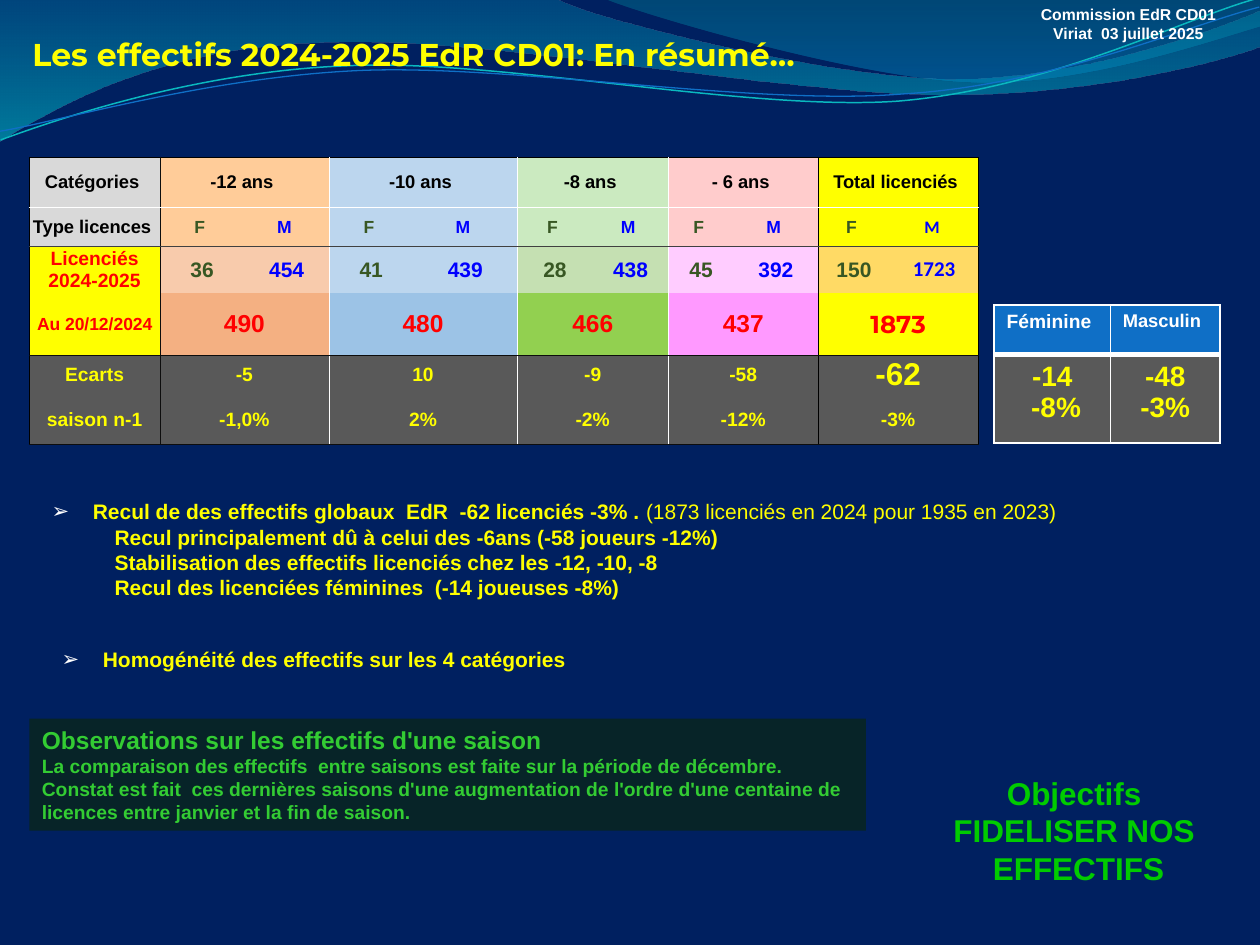
from copy import deepcopy
from math import cos, radians, sin
from lxml.etree import SubElement
from pptx import Presentation
from pptx.dml.color import RGBColor as Rgb
from pptx.enum.shapes import MSO_SHAPE as Shape
from pptx.enum.text import MSO_ANCHOR as Anchor, PP_ALIGN as Align
from pptx.oxml import parse_xml
from pptx.oxml.ns import nsdecls, qn
from pptx.util import Pt

THEME = {
    "navy": "002060", "yellow": "FFFF00", "white": "FFFFFF", "black": "000000",
    "ink": "0D0D0D", "rule": "404040", "red": "FF0000", "female": "385723",
    "male": "0000FF", "grey": "D9D9D9", "dark": "595959", "blue": "0F6FC6",
    "teal": "0AB8BF", "lime": "00CC00", "leaf": "33CC33", "forest": "072428",
    "font": "Arial", "title_font": "Montserrat", "alt_font": "Calibri",
    "title": 18, "note_title": 14, "body": 12, "note": 11, "small": 10.5,
    "tiny": 10, "stamp": 9, "total": 14, "balance": 16,
}

WAVES = [
    ([("L", 0, 0), ("L", 316.8, -0.7), ("C", 342.7, 12.2, 478.1, 45.4, 545.8, 45.4),
      ("C", 614.2, 45.4, 689.8, 18.7, 720, 6.5), ("L", 720.7, 25.9),
      ("C", 707.8, 31.7, 626.4, 54.7, 537.1, 54), ("C", 447.8, 54, 275, 20.2, 185, 24.5),
      ("C", 92.9, 25.9, 33.1, 59.8, -0.7, 81.4)],
     [(0, "0074A1", 45), (1, "00C6CF", 55)]),
    ([("L", 344.9, -0.7), ("C", 366.5, 7.9, 491, 44.6, 553.7, 46.8),
      ("C", 616.3, 49.7, 691.9, 23, 720, 15.1), ("L", 720, 0)],
     [(0, "00A1A9", 30), (0.8, "008BBF", 45)]),
]
TILT = 357.3
STRANDS = [
    ([("L", 0, 79.9), ("C", 34.6, 67, 113.8, 41, 199.4, 37.4),
      ("C", 284.4, 33.8, 427, 64.1, 513.4, 57.6),
      ("C", 599.8, 51.1, 675.4, 10.8, 718.6, -1.4)], (359.3, 41.4), "teal", 0.85),
    ([("L", 0, 74.9), ("C", 33.8, 69.1, 118.1, 43.9, 203.8, 40.3),
      ("C", 290.2, 36.7, 429.8, 60.5, 516.2, 54),
      ("C", 601.9, 48.2, 677.5, 15.1, 720, 4.3)], (359.7, 42.5), "blue", 0.75),
]

LABELS = [("Catégories ", "small", "black", "grey"), ("Type licences ", "small", "black", "grey"),
          ("Licenciés\v2024-2025", "note", "red", "yellow"),
          ("Au 20/12/2024", "tiny", "red", "yellow"),
          ("Ecarts", "note", "yellow", "dark"), ("saison n-1", "note", "yellow", "dark")]
GROUPS = [
    ("-12 ans ", "36", "454", "490", "-5", "-1,0%", "FFCC99", "F8CBAC", "F4B082"),
    ("-10 ans ", "41", "439", "480", "10", "2%", "BCD6EE", "BCD6EE", "9CC3E6"),
    ("-8 ans ", "28", "438", "466", "-9", "-2%", "CBEAC0", "C5E0B2", "92D050"),
    ("- 6 ans ", "45", "392", "437", "-58", "-12%", "FFCCCC", "FFCCFF", "FF99FF"),
    ("Total licenciés ", "150", "1723", "1873", "-62", "-3%", "FFFF00", "FFDA65", "FFFF00"),
]
COLUMNS = [74.6, 48.3, 48.3, 48.4, 59.2, 43.2, 43.2, 37.4, 48.2, 41, 50.5]
ROWS = [28.8, 22.3, 26.6, 35.6, 22.4, 28.4]
VERTICAL = {0: ("black", 0.5), 1: ("ink", 0.25), 9: ("black", 0.25), 11: ("black", 0.5),
            **dict.fromkeys((3, 5, 7), ("white", 0.25))}
HORIZONTAL = {0: ("black", 0.5), 1: ("white", 0.25), 2: ("rule", 1),
              4: ("ink", 0.25), 6: ("ink", 0.25)}
BALANCE = [("Féminine", "note", "-14\n -8%"), ("Masculin", "small", "-48\n-3%")]

BULLET, INDENT = {"bullet": "➢"}, {"left": 36}
TEXTS = [
    ((11.5, 16.5, 495.5, 29), {}, [
        ([("Les effectifs 2024-2025 EdR CD01: En résumé…", "title", "yellow", "title_font")], {})]),
    ((528.5, 438.5, 175.7, 73), {"align": Align.CENTER}, [
        ([("Objectifs ", "title", "lime")], {}),
        ([("FIDELISER NOS  EFFECTIFS", "title", "lime")], {})]),
    ((569.5, 0, 150.5, 28), {"align": Align.CENTER, "anchor": Anchor.BOTTOM}, [
        ([("Commission EdR CD01", "stamp", "white")], {}),
        ([("Viriat  03 juillet 2025", "stamp", "white")], {})]),
    ((28.1, 366, 382.5, 21.5), {}, [
        ([("Homogénéité des effectifs sur les 4 catégories", "body", "yellow")], BULLET)]),
    ((22.4, 281.5, 664, 65.5), {}, [
        ([("Recul de des effectifs globaux  EdR  -62 licenciés -3% . ", "body", "yellow"),
          ("(1873 licenciés en 2024 pour 1935 en 2023)", "body", "yellow", "font", False)], BULLET),
        ([("Recul principalement dû à celui des -6ans (-58 joueurs -12%)", "body", "yellow")], INDENT),
        ([("Stabilisation des effectifs licenciés chez les -12, -10, -8", "body", "yellow")], INDENT),
        ([("Recul des licenciées féminines  (-14 joueuses -8%)", "body", "yellow")], INDENT)]),
    ((16.8, 410.7, 478, 64), {"fill": "forest"}, [
        ([("Observations sur les effectifs d'une saison", "note_title", "leaf")], {}),
        ([("La comparaison des effectifs  entre saisons est faite sur la période de décembre.",
           "note", "leaf")], {}),
        ([("Constat est fait  ces dernières saisons d'une augmentation de l'ordre d'une centaine "
           "de licences entre janvier et la fin de saison.", "note", "leaf")], {})]),
]


def assign(target, values):
    for name, value in values.items():
        setattr(target, name, value)


def rgb(name):
    return Rgb.from_string(THEME.get(name, name))


def paint(fill, name):
    fill.solid()
    fill.fore_color.rgb = rgb(name)


def lay_out(para, layout):
    props = para._p.get_or_add_pPr()
    if "left" in layout:
        props.set("marL", str(Pt(layout["left"])))
    if "bullet" in layout:
        props.set("marL", str(Pt(23.6)))
        props.set("indent", str(-Pt(23.6)))
        color = SubElement(props, qn("a:buClr"))
        SubElement(color, qn("a:srgbClr")).set("val", THEME["white"])
        SubElement(props, qn("a:buFont")).set("typeface", THEME["font"])
        SubElement(props, qn("a:buChar")).set("char", layout["bullet"])


def write(frame, paragraphs, align):
    for index, (runs, layout) in enumerate(paragraphs):
        para = frame.add_paragraph() if index else frame.paragraphs[0]
        para.alignment = align
        lay_out(para, layout)
        for text, size, color, *rest in runs:
            font, bold = rest + ["font", True][len(rest):]
            for order, line in enumerate(text.split("\v")):
                if order:
                    para.add_line_break()
                    para._p[-1].append(deepcopy(span._r.rPr))
                span = para.add_run()
                span.text = line
                assign(span.font, {"name": THEME[font], "size": Pt(THEME[size]), "bold": bold})
                span.font.color.rgb = rgb(color)


def trace(shapes, segments, close, turn=0, centre=(0, 0)):
    cosine, sine = cos(radians(turn)), sin(radians(turn))
    points = []
    for _, *values in segments:
        for x, y in zip(values[::2], values[1::2]):
            across, down = x - centre[0], y - centre[1]
            points.append((centre[0] + across * cosine + down * sine,
                           centre[1] - across * sine + down * cosine))
    builder = shapes.build_freeform(*points[0], scale=Pt(1))
    builder.add_line_segments(points[1:], close=close)
    shape = builder.convert_to_shape()
    shape.shadow.inherit = False
    shape.rotation = turn
    lines = iter(list(shape._element.spPr.iter(qn("a:lnTo"))))
    for kind, *_ in segments[1:]:
        line = next(lines)
        if kind == "C":
            line.addprevious(curve := parse_xml(f'<a:cubicBezTo {nsdecls("a")}/>'))
            for part in (line, next(lines), next(lines)):
                curve.append(part[0])
                part.getparent().remove(part)
    return shape


def add_waves(page):
    for segments, stops in WAVES:
        wave = trace(page.shapes, segments, True)
        wave.line.fill.background()
        wave.fill.gradient()
        wave.fill.gradient_angle = 270
        for stop, (position, color, _) in zip(wave.fill.gradient_stops, stops):
            stop.color.rgb = rgb(color)
            stop.position = position
        tones = wave._element.spPr.iter(qn("a:srgbClr"))
        for tone, (_, _, opacity) in zip(tones, stops):
            SubElement(tone, qn("a:alpha")).set("val", str(opacity * 1000))
    group = page.shapes.add_group_shape()
    for segments, centre, color, width in STRANDS:
        strand = trace(group.shapes, segments, False, TILT, centre)
        strand.fill.background()
        strand.line.color.rgb = rgb(color)
        strand.line.width = Pt(width)


def frame_cell(cell, borders):
    props = cell._tc.get_or_add_tcPr()
    for index, (side, border) in enumerate(zip("LRTB", borders)):
        color, width = border or (None, 0)
        inner = (f'<a:solidFill><a:srgbClr val="{THEME[color]}"/></a:solidFill>'
                 if border else "<a:noFill/>")
        props.insert(index, parse_xml(
            f'<a:ln{side} {nsdecls("a")} w="{Pt(width)}">{inner}</a:ln{side}>'))


def put(cell, text, size, color, fill, font="font", align=Align.CENTER):
    paint(cell.fill, fill)
    write(cell.text_frame, [([(line, size, color, font)], {}) for line in text.split("\n")], align)


def add_grid(page, left, top, columns, rows):
    grid = page.shapes.add_table(len(rows), len(columns), Pt(left), Pt(top),
                                 Pt(sum(columns)), Pt(sum(rows))).table
    assign(grid, {"first_row": False, "horz_banding": False})
    for column, width in zip(grid.columns, columns):
        column.width = Pt(width)
    for row, height in zip(grid.rows, rows):
        row.height = Pt(height)
    return grid


def add_licences(page):
    grid = add_grid(page, 16.8, 89.8, COLUMNS, ROWS)
    for row, label in enumerate(LABELS):
        put(grid.cell(row, 0), *label)
    for index, (name, women, men, total, gap, share, head, tint, strong) in enumerate(GROUPS):
        column, last = 1 + 2 * index, index == len(GROUPS) - 1
        men_font = "alt_font" if last else "font"
        for row, entry in {0: (name, "small", "black", head),
                           3: (total, "total", "red", strong, "title_font" if last else "font"),
                           4: (gap, "title" if last else "note", "yellow", "dark"),
                           5: (share, "note", "yellow", "dark")}.items():
            grid.cell(row, column).merge(grid.cell(row, column + 1))
            put(grid.cell(row, column), *entry)
        for row, female, male, size, fill in ((1, "F ", "M ", "tiny", head),
                                              (2, women, men, "body", tint)):
            put(grid.cell(row, column), female, size, "female", fill)
            put(grid.cell(row, column + 1), male, size, "male", fill, men_font)
    for row in range(len(ROWS)):
        for column in range(len(COLUMNS)):
            cell = grid.cell(row, column)
            assign(cell, {"vertical_anchor": Anchor.MIDDLE, **dict.fromkeys(
                ("margin_left", "margin_right", "margin_top", "margin_bottom"), 0)})
            width = cell.span_width if cell.is_merge_origin else 1
            frame_cell(cell, (VERTICAL.get(column), VERTICAL.get(column + width),
                              HORIZONTAL.get(row), HORIZONTAL.get(row + 1)))


def add_balance(page):
    grid = add_grid(page, 568, 174.3, [66.5, 62.7], [28.4, 50.4])
    thin, thick = ("white", 1), ("white", 3)
    for column, (name, size, values) in enumerate(BALANCE):
        put(grid.cell(0, column), name, size, "white", "blue", align=Align.LEFT)
        put(grid.cell(1, column), values, "balance", "yellow", "dark")
        frame_cell(grid.cell(0, column), (thin, thin, thin, thick))
        frame_cell(grid.cell(1, column), (thin, thin, thick, thin))


def add_texts(page):
    for place, layout, paragraphs in TEXTS:
        area = [Pt(value) for value in place]
        if "fill" in layout:
            box = page.shapes.add_shape(Shape.RECTANGLE, *area)
            box.shadow.inherit = False
            paint(box.fill, layout["fill"])
            box.line.fill.background()
        else:
            box = page.shapes.add_textbox(*area)
        assign(box.text_frame, {"word_wrap": True,
                                "vertical_anchor": layout.get("anchor", Anchor.TOP)})
        write(box.text_frame, paragraphs, layout.get("align", Align.LEFT))


def main():
    deck = Presentation()
    assign(deck, {"slide_width": Pt(720), "slide_height": Pt(540)})
    page = deck.slides.add_slide(deck.slide_layouts[6])
    paint(page.background.fill, "navy")
    for add in (add_waves, add_texts, add_licences, add_balance):
        add(page)
    deck.save("out.pptx")


if __name__ == "__main__":
    main()
